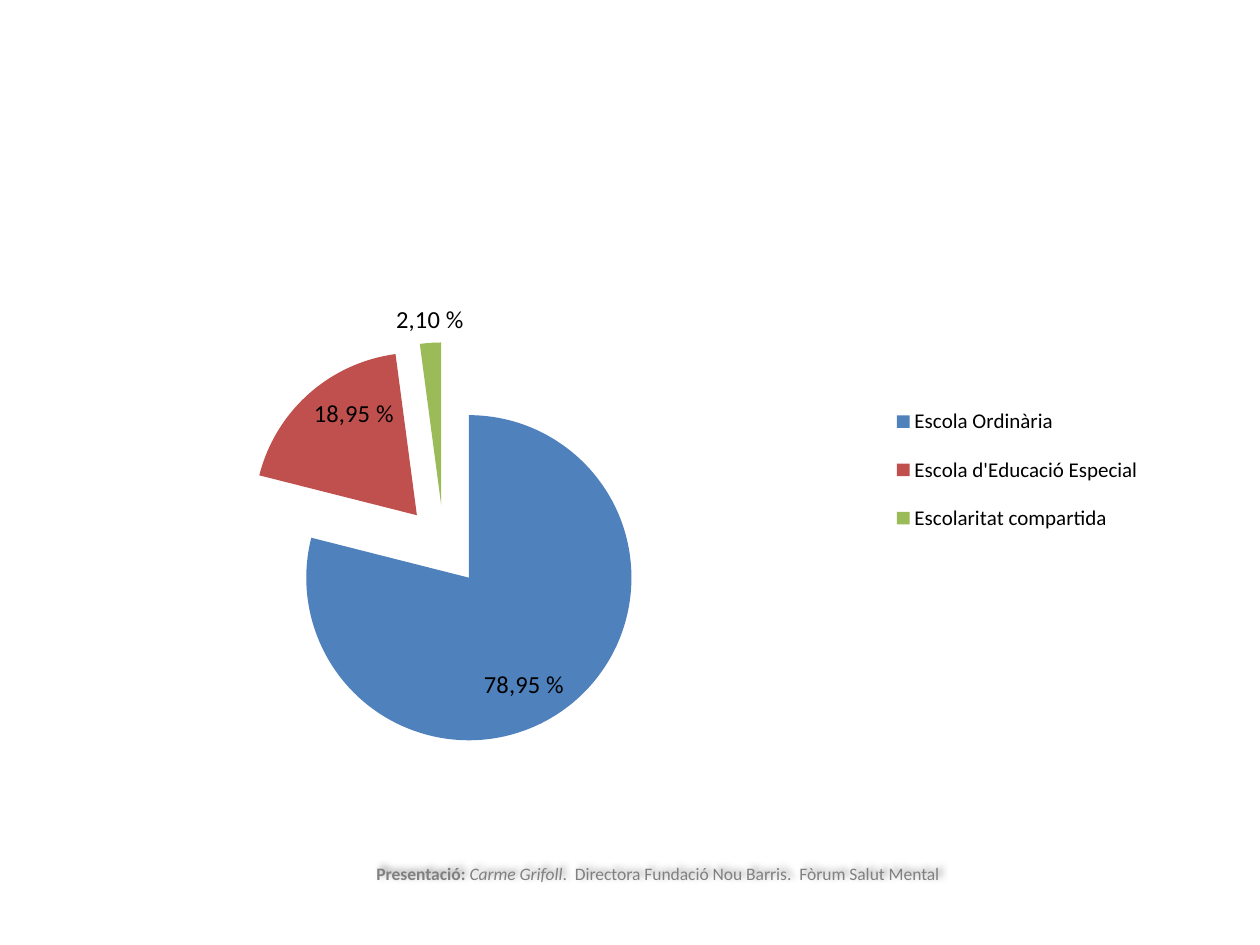
import pptx
import pptx.chart.data
import pptx.dml.color
import pptx.enum.chart
import pptx.enum.text
import pptx.oxml
import pptx.oxml.ns
import pptx.util

PX = 914400 // 126
FONT = "Calibri"
POSITION = pptx.enum.chart.XL_LABEL_POSITION

SCHOOLS = [
    # category, value, label, colour, label position
    ("Escola Ordinària", 78.95, "78,95 %", "4F81BD", POSITION.INSIDE_END),
    ("Escola d'Educació Especial", 18.95, "18,95 %", "C0504D", POSITION.INSIDE_END),
    ("Escolaritat compartida", 2.1, "2,10 %", "9BBB59", POSITION.OUTSIDE_END),
]
CREDIT = [
    ("Presentació: ", {"bold": True}),
    ("Carme Grifoll", {"italic": True}),
    (".  Directora Fundació Nou Barris.  Fòrum Salut Mental", {}),
]
CHART_BOX = (147, 207, 1024, 542)
CREDIT_BOX = (364, 857, 620, 49)
PLOT_LAYOUT = (0, 0.25, 0.58, 0.75)
LEGEND_LAYOUT = (0.72, 0.33, 0.26, 0.31)
EXPLOSION = 25


def color(value):
    return pptx.dml.color.RGBColor.from_string(value)


def box(lengths):
    return [length * PX for length in lengths]


def format_font(font, size, fill="000000", bold=False, italic=False):
    font.name = FONT
    font.size = pptx.util.Pt(size)
    font.bold = bold
    font.italic = italic
    font.color.rgb = color(fill)


def add_text(paragraph, text, **formats):
    run = paragraph.add_run()
    run.text = text
    format_font(run.font, **formats)


def set_layout(element, fractions, before, inner=False):
    """Place a chart part by fractions of the chart, ahead of the child named before."""
    for old in element.findall(pptx.oxml.ns.qn("c:layout")):
        element.remove(old)
    target = '<c:layoutTarget val="inner"/>' if inner else ""
    modes = '<c:xMode val="edge"/><c:yMode val="edge"/>'
    sizes = "".join(f'<c:{name} val="{part}"/>' for name, part in zip("xywh", fractions))
    layout = pptx.oxml.parse_xml(
        f'<c:layout {pptx.oxml.ns.nsdecls("c")}><c:manualLayout>'
        f"{target}{modes}{sizes}</c:manualLayout></c:layout>")
    element.find(pptx.oxml.ns.qn(before)).addprevious(layout)


def add_pie(slide):
    data = pptx.chart.data.CategoryChartData()
    data.categories = [school[0] for school in SCHOOLS]
    data.add_series("Series 1", [school[1] for school in SCHOOLS])
    chart = slide.shapes.add_chart(
        pptx.enum.chart.XL_CHART_TYPE.PIE, *box(CHART_BOX), data).chart
    chart.has_title = False
    format_font(chart.font, 10)

    chart.has_legend = True
    chart.legend.position = pptx.enum.chart.XL_LEGEND_POSITION.RIGHT
    chart.legend.include_in_layout = False
    format_font(chart.legend.font, 12)

    plot = chart.plots[0]
    plot.vary_by_categories = True
    series = plot.series[0]
    for index, (_, _, label, fill, position) in enumerate(SCHOOLS):
        point = series.points[index]
        point.format.fill.solid()
        point.format.fill.fore_color.rgb = color(fill)
        add_text(point.data_label.text_frame.paragraphs[0], label, size=14)
        point.data_label.position = position
    series.data_labels.show_value = True
    format_font(series.data_labels.font, 14)

    explosion = pptx.oxml.parse_xml(
        f'<c:explosion {pptx.oxml.ns.nsdecls("c")} val="{EXPLOSION}"/>')
    plot_element = chart.element.find(".//" + pptx.oxml.ns.qn("c:plotArea"))
    plot_element.find(".//" + pptx.oxml.ns.qn("c:dPt")).addprevious(explosion)
    set_layout(plot_element, PLOT_LAYOUT, "c:pieChart", inner=True)
    legend_element = chart.element.find(".//" + pptx.oxml.ns.qn("c:legend"))
    set_layout(legend_element, LEGEND_LAYOUT, "c:overlay")


def add_credit(slide):
    shape = slide.shapes.add_textbox(*box(CREDIT_BOX))
    shape.text_frame.word_wrap = True
    paragraph = shape.text_frame.paragraphs[0]
    paragraph.alignment = pptx.enum.text.PP_ALIGN.JUSTIFY
    for text, formats in CREDIT:
        add_text(paragraph, text, size=10, fill="808080", **formats)
    shadow = pptx.oxml.parse_xml(
        f'<a:effectLst {pptx.oxml.ns.nsdecls("a")}>'
        '<a:outerShdw blurRad="50800" dist="38100" dir="18900000" rotWithShape="0">'
        '<a:srgbClr val="000000"><a:alpha val="40000"/></a:srgbClr>'
        "</a:outerShdw></a:effectLst>")
    shape.element.spPr.append(shadow)


def main():
    presentation = pptx.Presentation()
    presentation.slide_width = pptx.util.Inches(10)
    presentation.slide_height = pptx.util.Inches(7.5)
    slide = presentation.slides.add_slide(presentation.slide_layouts[6])
    add_pie(slide)
    add_credit(slide)
    presentation.save("out.pptx")


if __name__ == "__main__":
    main()
